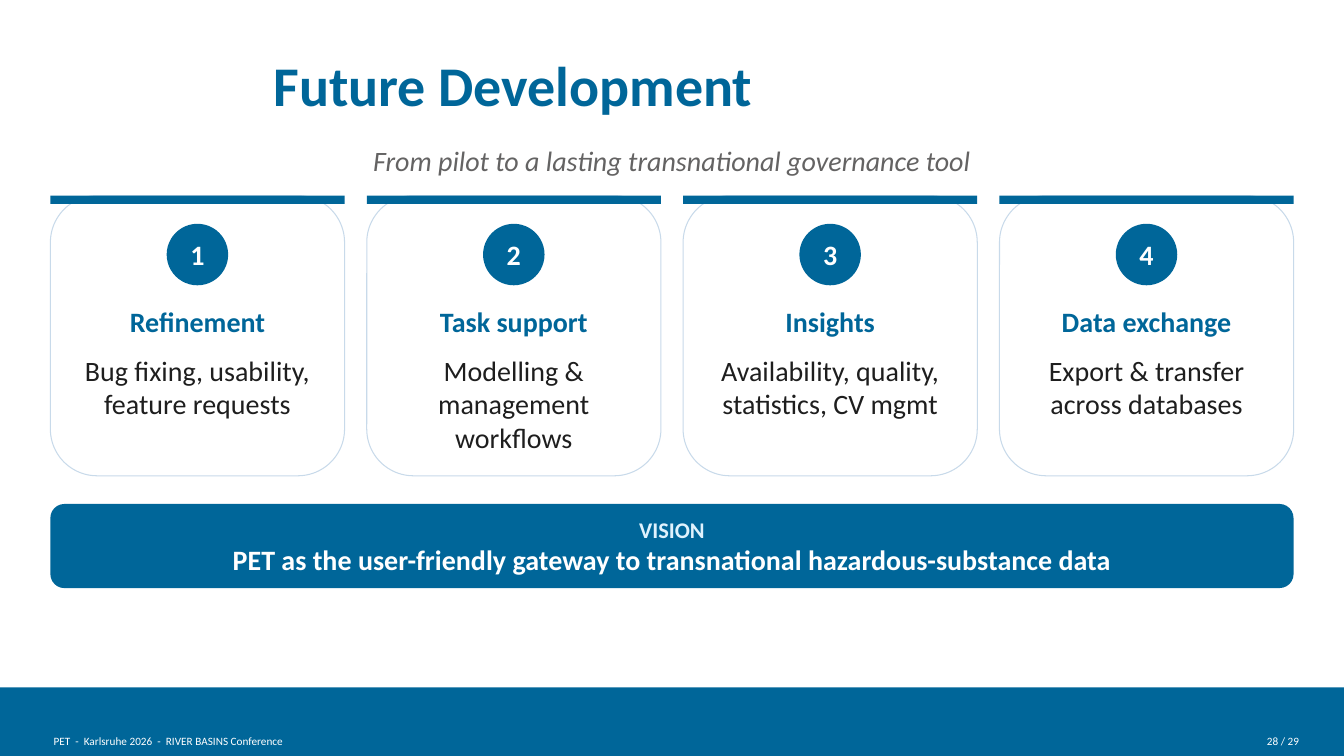
"""Build the Future Development slide with four cards and a vision bar."""
import pptx
import pptx.util
import pptx.dml.color
import pptx.enum.shapes
import pptx.enum.text

Cm = pptx.util.Cm
Pt = pptx.util.Pt
Rgb = pptx.dml.color.RGBColor.from_string
Kind = pptx.enum.shapes.MSO_SHAPE
Align = pptx.enum.text.PP_ALIGN
Anchor = pptx.enum.text.MSO_ANCHOR
Fit = pptx.enum.text.MSO_AUTO_SIZE

hues = {
    "blue": "006699",
    "white": "FFFFFF",
    "grey": "646363",
    "edge": "C8DAEA",
    "ink": "1E1E1E",
    "pale": "DFF2FD",
}
plain = {"name": "Calibri", "size": Pt(20), "bold": False, "italic": False}
bold = {**plain, "bold": True}
small = {**plain, "size": Pt(8)}

deck = pptx.Presentation()
deck.slide_width, deck.slide_height = Cm(33.87), Cm(19.05)
slide = deck.slides.add_slide(deck.slide_layouts[5])
shapes = slide.shapes


def draw(kind, left, top, width, height, fill, edge=None):
    """Add a filled preset shape, with a thin outline if an edge hue is given."""
    shape = shapes.add_shape(kind, Cm(left), Cm(top), Cm(width), Cm(height))
    shape.shadow.inherit = False
    shape.fill.solid()
    shape.fill.fore_color.rgb = Rgb(hues[fill])
    if edge:
        shape.line.color.rgb = Rgb(hues[edge])
        shape.line.width = Pt(0.75)
    else:
        shape.line.fill.background()
    return shape


def write(shape, lines, align=Align.CENTER, anchor=Anchor.TOP, pad=(0.08, 0.08), fit=Fit.SHAPE_TO_FIT_TEXT):
    """Fill a shape with lines of (text, hue, format)."""
    frame = shape.text_frame
    layout = {
        "word_wrap": True, "auto_size": fit, "vertical_anchor": anchor,
        "margin_left": Cm(pad[0]), "margin_right": Cm(pad[0]),
        "margin_top": Cm(pad[1]), "margin_bottom": Cm(pad[1]),
    }
    for key, value in layout.items():
        setattr(frame, key, value)
    for spot, (text, hue, form) in enumerate(lines):
        para = frame.add_paragraph() if spot else frame.paragraphs[0]
        para.alignment = align
        run = para.add_run()
        run.text = text
        run.font.color.rgb = Rgb(hues[hue])
        for key, value in form.items():
            setattr(run.font, key, value)


draw(Kind.RECTANGLE, 0, 17.32, 33.87, 1.73, "blue")

title = shapes.title
place = {"left": 6.81, "top": 1.19, "width": 25.78, "height": 1.85}
for key, value in place.items():
    setattr(title, key, Cm(value))
write(title, [("Future Development", "blue", {**bold, "size": Pt(40)})], Align.LEFT, Anchor.MIDDLE)

edge, full = 1.27, 31.33
lead = shapes.add_textbox(Cm(edge), Cm(3.53), Cm(full), Cm(0.99))
write(lead, [("From pilot to a lasting transnational governance tool", "grey", {**plain, "italic": True})])

cards = [
    ("Refinement", "Bug fixing, usability, feature requests"),
    ("Task support", "Modelling & management workflows"),
    ("Insights", "Availability, quality, statistics, CV mgmt"),
    ("Data exchange", "Export & transfer across databases"),
]
gap, top, dot = 0.56, 4.93, 1.55
wide = (full - gap * (len(cards) - 1)) / len(cards)
for spot, (head, body) in enumerate(cards):
    left = edge + spot * (wide + gap)
    draw(Kind.ROUNDED_RECTANGLE, left, top, wide, 7.06, "white", "edge")
    draw(Kind.RECTANGLE, left, top, wide, 0.21, "blue")
    badge = draw(Kind.OVAL, left + (wide - dot) / 2, 5.64, dot, dot, "blue")
    write(badge, [(str(spot + 1), "white", bold)], anchor=Anchor.MIDDLE, pad=(0.15, 0.08), fit=Fit.NONE)
    texts = [(head, "blue", bold, 0.35, 7.6, 0.99), (body, "ink", plain, 0.49, 8.82, 1.85)]
    for text, hue, form, inset, line, tall in texts:
        box = shapes.add_textbox(Cm(left + inset), Cm(line), Cm(wide - 2 * inset), Cm(tall))
        write(box, [(text, hue, form)])

vision = draw(Kind.ROUNDED_RECTANGLE, edge, 12.7, full, 2.12, "blue")
goal = "PET as the user-friendly gateway to transnational hazardous-substance data"
lines = [("VISION", "pale", {**bold, "size": Pt(16)}), (goal, "white", bold)]
write(vision, lines, anchor=Anchor.MIDDLE, pad=(0.71, 0.28), fit=Fit.NONE)

notes = [
    ("PET  -  Karlsruhe 2026  -  RIVER BASINS Conference", edge, 17.63, Align.LEFT),
    ("28 / 29", 30, 2.82, Align.RIGHT),
]
for text, left, width, align in notes:
    box = shapes.add_textbox(Cm(left), Cm(18.42), Cm(width), Cm(0.48))
    write(box, [(text, "white", small)], align)

deck.save("out.pptx")
